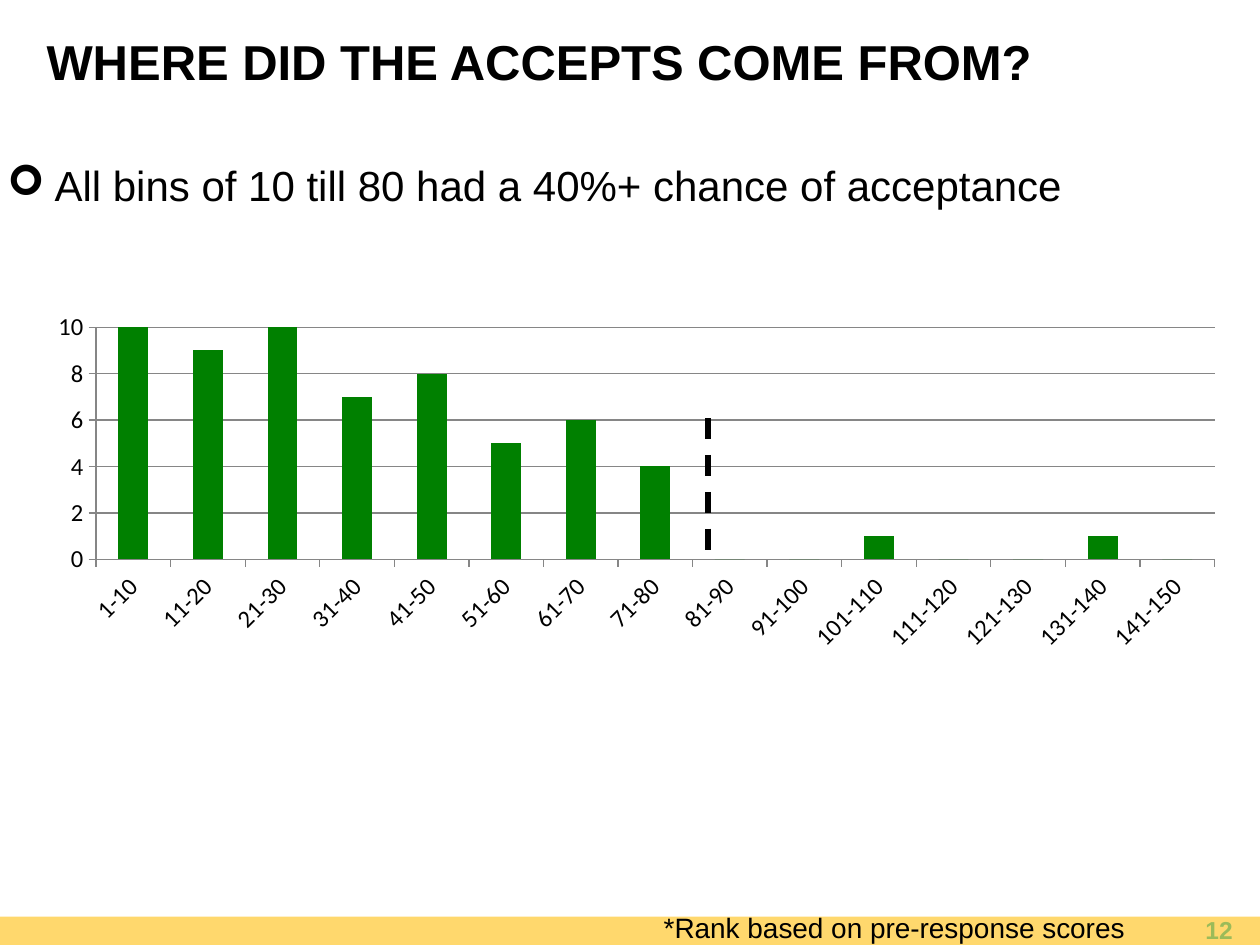
from lxml import etree
from pptx import Presentation
from pptx.chart.data import CategoryChartData
from pptx.dml.color import RGBColor
from pptx.enum.chart import XL_CHART_TYPE, XL_TICK_MARK
from pptx.enum.dml import MSO_LINE
from pptx.enum.shapes import MSO_CONNECTOR, MSO_SHAPE
from pptx.enum.text import MSO_ANCHOR, PP_ALIGN
from pptx.oxml.ns import qn
from pptx.util import Cm, Pt

COLUMNS = XL_CHART_TYPE.COLUMN_CLUSTERED
TICK_OUT = XL_TICK_MARK.OUTSIDE
DASH = MSO_LINE.DASH
STRAIGHT = MSO_CONNECTOR.STRAIGHT
RECTANGLE = MSO_SHAPE.RECTANGLE
TOP, MIDDLE = MSO_ANCHOR.TOP, MSO_ANCHOR.MIDDLE
LEFT, RIGHT = PP_ALIGN.LEFT, PP_ALIGN.RIGHT

COLORS = {"text": "000000", "band": "FFD86D", "number": "9BBB59",
          "bars": "008000", "grid": "868686"}

TITLE = "WHERE DID THE ACCEPTS COME FROM?"
FINDING = "All bins of 10 till 80 had a 40%+ chance of acceptance"
FOOTNOTE = "*Rank based on pre-response scores"
PAGE_NUMBER = "12"
ACCEPTS = [10, 9, 10, 7, 8, 5, 6, 4, 0, 0, 1, 0, 0, 1, 0]
BIN_SIZE = 10
RANK_BINS = [f"{i * BIN_SIZE + 1}-{(i + 1) * BIN_SIZE}" for i in range(len(ACCEPTS))]

SLIDE_WIDTH, SLIDE_HEIGHT = Cm(25.4), Cm(19.05)
BAND_HEIGHT = Cm(0.57)
BULLET_INDENT = Cm(0.95)


def color(name):
    return RGBColor.from_string(COLORS[name])


def add_text(slide, text, box, size, color_name="text", bold=False,
             align=LEFT, anchor=TOP, wrap=True, bullet=None):
    frame = slide.shapes.add_textbox(*map(Cm, box)).text_frame
    frame.word_wrap = wrap
    frame.vertical_anchor = anchor
    frame.text = text
    paragraph = frame.paragraphs[0]
    paragraph.alignment = align
    if bullet:
        properties = paragraph._p.get_or_add_pPr()
        properties.set("marL", str(BULLET_INDENT))
        properties.set("indent", str(-BULLET_INDENT))
        etree.SubElement(properties, qn("a:buFont")).set("typeface", "Wingdings")
        etree.SubElement(properties, qn("a:buChar")).set("char", bullet)
    font = paragraph.runs[0].font
    font.name, font.size, font.bold = "Arial", Pt(size), bold
    font.color.rgb = color(color_name)


def add_band(slide):
    band = slide.shapes.add_shape(RECTANGLE, 0, SLIDE_HEIGHT - BAND_HEIGHT,
                                  SLIDE_WIDTH, BAND_HEIGHT)
    band.shadow.inherit = False
    band.fill.solid()
    band.fill.fore_color.rgb = color("band")
    band.line.fill.background()


def add_accepts_chart(slide):
    data = CategoryChartData()
    data.categories = RANK_BINS
    data.add_series("Series 1", ACCEPTS)
    chart = slide.shapes.add_chart(COLUMNS, Cm(0.69), Cm(6.15), Cm(24.28),
                                   Cm(7.14), data).chart
    chart.has_legend = False
    chart.has_title = False
    chart.font.name, chart.font.size = "Calibri", Pt(14)
    chart.font.color.rgb = color("text")

    plot = chart.plots[0]
    plot.gap_width = 150
    plot.vary_by_categories = False
    bars = plot.series[0].format.fill
    bars.solid()
    bars.fore_color.rgb = color("bars")

    ranks, counts = chart.category_axis, chart.value_axis
    counts.minimum_scale, counts.maximum_scale, counts.major_unit = 0, 10, 2
    counts.has_major_gridlines = True
    for line in (ranks.format.line, counts.format.line,
                 counts.major_gridlines.format.line):
        line.color.rgb = color("grid")
        line.width = Pt(0.75)
    for axis in (ranks, counts):
        axis.major_tick_mark = TICK_OUT
        axis.tick_labels.font.size = Pt(14)
    # Label rotation is in 60000ths of a degree
    ranks._element.find(qn("c:txPr")).find(qn("a:bodyPr")).set("rot", str(-45 * 60000))


def add_cutoff_line(slide):
    cutoff = slide.shapes.add_connector(STRAIGHT, Cm(14.27), Cm(8.43), Cm(14.27), Cm(11.15))
    cutoff.line.color.rgb = color("text")
    cutoff.line.width = Pt(3)
    cutoff.line.dash_style = DASH
    etree.SubElement(cutoff._element.spPr, qn("a:effectLst"))


def main():
    deck = Presentation()
    deck.slide_width, deck.slide_height = SLIDE_WIDTH, SLIDE_HEIGHT
    slide = deck.slides.add_slide(deck.slide_layouts[6])
    add_band(slide)
    add_text(slide, TITLE, (0.69, 0.56, 23.29, 1.35), 28, bold=True, anchor=MIDDLE)
    add_text(slide, PAGE_NUMBER, (19.18, 18.42, 5.92, 0.66), 14, "number",
             bold=True, align=RIGHT, anchor=MIDDLE)
    add_text(slide, FINDING, (-0.1, 3.1, 25.5, 1.27), 24, bullet="➢")
    add_text(slide, FOOTNOTE, (13.13, 18.24, 9.93, 0.94), 16, wrap=False)
    add_accepts_chart(slide)
    add_cutoff_line(slide)
    deck.save("out.pptx")


if __name__ == "__main__":
    main()
